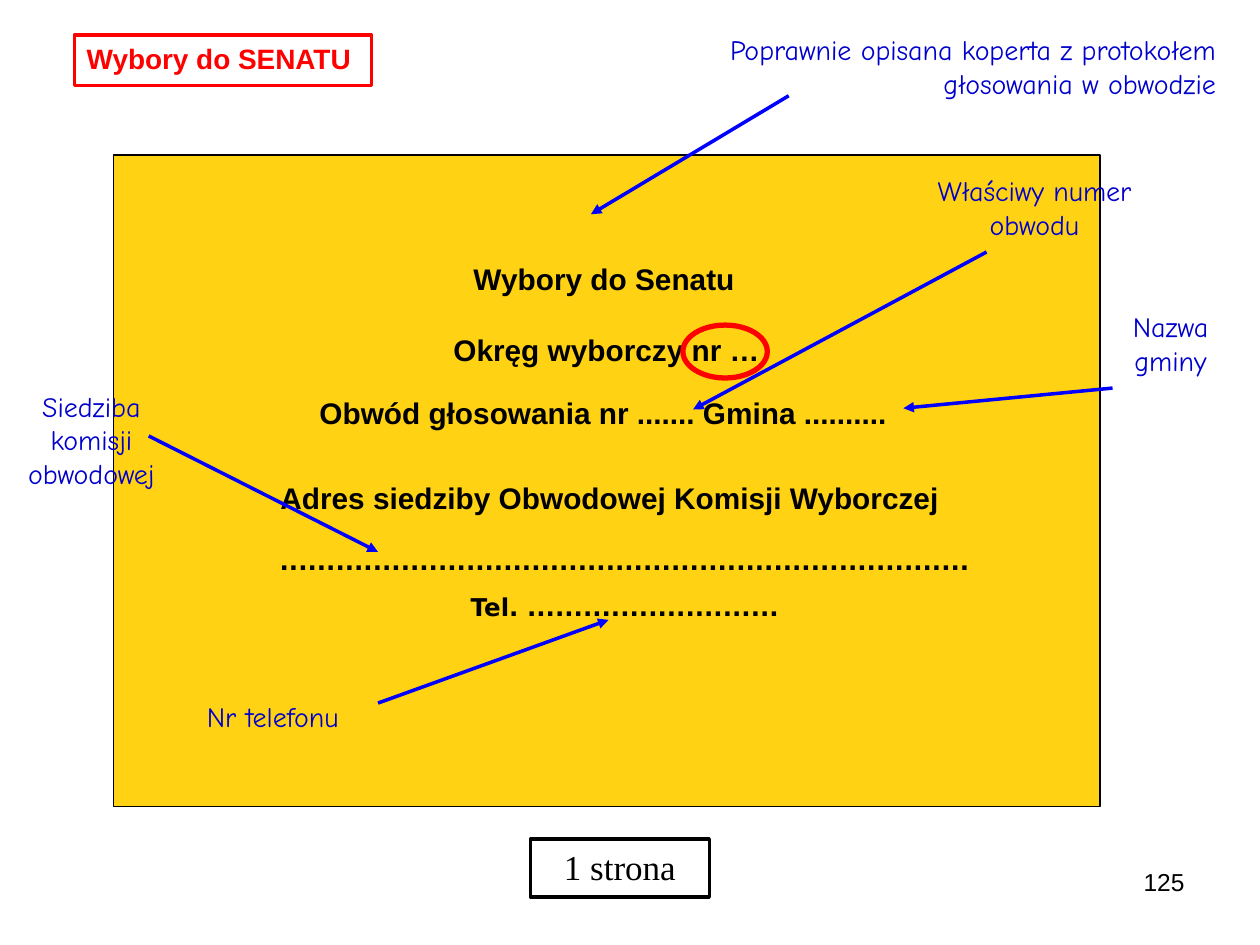
import pptx
import pptx.util
from lxml import etree
from pptx.dml.color import RGBColor
from pptx.enum.shapes import MSO_CONNECTOR, MSO_SHAPE
from pptx.enum.text import MSO_ANCHOR, PP_ALIGN
from pptx.oxml.ns import qn
from pptx.util import Inches

BLACK = RGBColor(0x00, 0x00, 0x00)
RED = RGBColor(0xFF, 0x00, 0x00)
ARROW_BLUE = RGBColor(0x00, 0x00, 0xFF)
NOTE_BLUE = RGBColor(0x00, 0x00, 0xCC)
ENVELOPE_YELLOW = RGBColor(0xFF, 0xD2, 0x13)
LEFT, CENTER, RIGHT = PP_ALIGN.LEFT, PP_ALIGN.CENTER, PP_ALIGN.RIGHT


class EnvelopeSlide:
    """Holds the current slide and the look of its elements."""

    def __init__(self, slide):
        self.slide = slide

    def set_text(self, shape, text, size, font, color=BLACK, bold=False,
                 align=LEFT, line_spacing=None, gap=None):
        frame = shape.text_frame
        frame.word_wrap = True
        frame.vertical_anchor = MSO_ANCHOR.TOP
        frame.text = text
        for index, paragraph in enumerate(frame.paragraphs):
            paragraph.alignment = align
            if line_spacing:
                paragraph.line_spacing = line_spacing
            if gap and index:
                paragraph.space_before = gap
            for run in paragraph.runs:
                run.font.size = pptx.util.Pt(size)
                run.font.name = font
                run.font.bold = bold
                run.font.color.rgb = color

    def text(self, box, text, size, font, parent=None, **style):
        shapes = (parent or self.slide).shapes
        textbox = shapes.add_textbox(*map(Inches, box))
        self.set_text(textbox, text, size, font, **style)

    def outline(self, preset, box, color, width, fill=None):
        shape = self.slide.shapes.add_shape(preset, *map(Inches, box))
        shape.shadow.inherit = False
        if fill is None:
            shape.fill.background()
        else:
            shape.fill.solid()
            shape.fill.fore_color.rgb = fill
        shape.line.color.rgb = color
        shape.line.width = pptx.util.Pt(width)
        return shape

    def arrow(self, parent, start, end):
        arrow = parent.shapes.add_connector(
            MSO_CONNECTOR.STRAIGHT, *map(Inches, start + end))
        arrow.line.color.rgb = ARROW_BLUE
        arrow.line.width = pptx.util.Pt(2)
        properties = arrow._element.spPr
        line = properties.find(qn("a:ln"))
        etree.SubElement(line, qn("a:tailEnd"), type="triangle")
        etree.SubElement(properties, qn("a:effectLst"))

    def callout(self, text, box, start, end, align=CENTER):
        group = self.slide.shapes.add_group_shape()
        self.arrow(group, start, end)
        self.text(box, text, 16, "Comic Neue", parent=group,
                  color=NOTE_BLUE, align=align)


def main():
    presentation = pptx.Presentation()
    presentation.slide_width = Inches(10)
    presentation.slide_height = Inches(7.5)
    page = EnvelopeSlide(
        presentation.slides.add_slide(presentation.slide_layouts[6]))

    # Page number and envelope
    page.text((7.17, 6.83, 2.33, 0.52), "125", 14, "Arial", align=RIGHT)
    page.outline(MSO_SHAPE.RECTANGLE, (0.9, 1.23, 7.83, 5.17), BLACK, 0.75,
                 fill=ENVELOPE_YELLOW)

    # Address and telephone lines
    page.text((1.5, 4.24, 6.92, 0.78), "." * 74 + "\nTel. " + "." * 27,
              14, "DejaVu Sans", bold=True, align=CENTER,
              line_spacing=1.2, gap=pptx.util.Pt(6))

    # Envelope headings
    headings = [
        ("Wybory do Senatu", (3.66, 2.02, 2.34, 0.38), LEFT),
        ("Okręg wyborczy nr …", (3.5, 2.58, 2.67, 0.38), LEFT),
        ("Obwód głosowania nr ....... Gmina ..........",
         (2.33, 3.08, 4.92, 0.38), CENTER),
        ("Adres siedziby Obwodowej Komisji Wyborczej",
         (1.85, 3.76, 5.98, 0.38), CENTER),
    ]
    for heading, box, align in headings:
        page.text(box, heading, 17, "Arial", bold=True, align=align)

    # Ring around the constituency number
    page.outline(MSO_SHAPE.OVAL, (5.42, 2.58, 0.67, 0.42), RED, 3)

    # Callouts with arrows
    page.callout("Poprawnie opisana koperta z protokołem głosowania w obwodzie",
                 (5.08, 0.21, 4.67, 0.64), (6.26, 0.76), (4.69, 1.7), RIGHT)
    page.callout("Właściwy numer obwodu",
                 (7.17, 1.33, 2.08, 0.64), (7.83, 2), (5.5, 3.25))
    page.callout("Nazwa gminy",
                 (8.58, 2.41, 1.42, 0.64), (8.83, 3.08), (7.17, 3.24))
    page.callout("Siedziba komisji obwodowej",
                 (0, 3.04, 1.45, 0.9), (1.18, 3.46), (3, 4.38))
    page.callout("Nr telefonu",
                 (1.33, 5.5, 1.67, 0.37), (3, 5.58), (4.83, 4.92))

    # Framed labels
    side_label = page.outline(
        MSO_SHAPE.RECTANGLE, (4.21, 6.66, 1.42, 0.46), BLACK, 2)
    page.set_text(side_label, "1 strona", 20, "Times New Roman", align=CENTER)
    election_label = page.outline(
        MSO_SHAPE.RECTANGLE, (0.59, 0.28, 2.36, 0.4), RED, 2)
    page.set_text(election_label, "Wybory do SENATU", 16, "Arial",
                  color=RED, bold=True)

    presentation.save("out.pptx")


if __name__ == "__main__":
    main()
